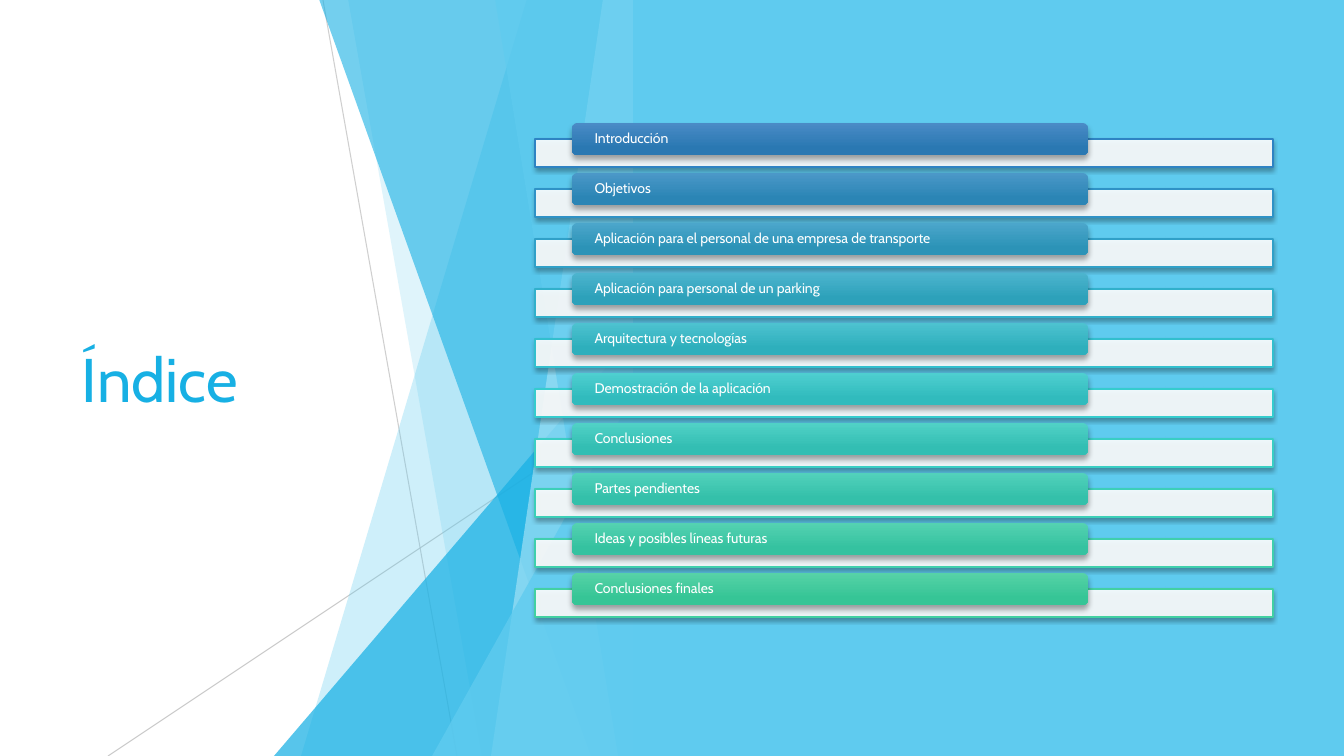
from lxml.etree import SubElement
from pptx import Presentation
from pptx.dml.color import RGBColor
from pptx.enum.shapes import MSO_CONNECTOR, MSO_SHAPE
from pptx.enum.text import MSO_ANCHOR
from pptx.oxml.ns import qn
from pptx.util import Pt

PX = 9071
WIDTH, HEIGHT = 1344, 756
PANEL_LEFT = 633
ROW_PITCH = 50

FONT = "Cabin"
WHITE = RGBColor(0xFF, 0xFF, 0xFF)
GRAY = RGBColor(0xBF, 0xBF, 0xBF)
SKY = RGBColor(0x5F, 0xCB, 0xEF)
PALE_SKY = RGBColor(0x9F, 0xE0, 0xF5)
BLUE = RGBColor(0x17, 0xB0, 0xE4)

TOPICS = [
    ("Introducción", RGBColor(0x2E, 0x83, 0xC3), RGBColor(0x4A, 0x8B, 0xC6), RGBColor(0x2A, 0x78, 0xB2)),
    ("Objetivos", RGBColor(0x2F, 0x92, 0xC6), RGBColor(0x4B, 0x98, 0xC8), RGBColor(0x2B, 0x85, 0xB5)),
    ("Aplicación para el personal de una empresa de transporte",
     RGBColor(0x30, 0xA0, 0xC8), RGBColor(0x4B, 0xA6, 0xCB), RGBColor(0x2C, 0x93, 0xB7)),
    ("Aplicación para personal de un parking",
     RGBColor(0x31, 0xB0, 0xCB), RGBColor(0x4C, 0xB4, 0xCE), RGBColor(0x2D, 0xA1, 0xBA)),
    ("Arquitectura y tecnologías",
     RGBColor(0x32, 0xBF, 0xCE), RGBColor(0x4D, 0xC2, 0xD0), RGBColor(0x2E, 0xAF, 0xBC)),
    ("Demostración de la aplicación",
     RGBColor(0x35, 0xCC, 0xCE), RGBColor(0x4E, 0xCF, 0xD0), RGBColor(0x31, 0xBB, 0xBD)),
    ("Conclusiones", RGBColor(0x39, 0xCE, 0xC4), RGBColor(0x50, 0xD1, 0xC6), RGBColor(0x33, 0xBE, 0xB3)),
    ("Partes pendientes", RGBColor(0x3C, 0xCF, 0xB8), RGBColor(0x52, 0xD1, 0xBB), RGBColor(0x34, 0xC0, 0xAA)),
    ("Ideas y posibles líneas futuras",
     RGBColor(0x3F, 0xCF, 0xAD), RGBColor(0x54, 0xD2, 0xB1), RGBColor(0x35, 0xC2, 0xA0)),
    ("Conclusiones finales", RGBColor(0x42, 0xD0, 0xA2), RGBColor(0x56, 0xD2, 0xA7), RGBColor(0x36, 0xC5, 0x96)),
]


def paint(shape, color, opacity=100):
    shape.shadow.inherit = False
    shape.line.fill.background()
    shape.fill.solid()
    shape.fill.fore_color.rgb = color
    if opacity < 100:
        color_element = shape.fill._xPr.find(qn("a:solidFill"))[0]
        SubElement(color_element, qn("a:alpha"), val=str(opacity * 1000))


def cast_shadow(shape, blur, distance):
    shape.shadow.inherit = False
    effects = shape._element.spPr.find(qn("a:effectLst"))
    shadow = SubElement(effects, qn("a:outerShdw"), blurRad=str(Pt(blur)), dist=str(Pt(distance)),
                        dir="5400000", algn="ctr", rotWithShape="0")
    color_element = SubElement(shadow, qn("a:srgbClr"), val="000000")
    SubElement(color_element, qn("a:alpha"), val="35000")


def write_text(shape, text, size, color, inset, line_spacing=1.0):
    frame = shape.text_frame
    frame.word_wrap = True
    frame.vertical_anchor = MSO_ANCHOR.MIDDLE
    frame.margin_left = frame.margin_right = inset * PX
    frame.margin_top = frame.margin_bottom = 0
    paragraph = frame.paragraphs[0]
    paragraph.alignment = 1
    paragraph.line_spacing = line_spacing
    run = paragraph.add_run()
    run.text = text
    run.font.name = FONT
    run.font.size = Pt(size)
    run.font.color.rgb = color


presentation = Presentation()
presentation.slide_width = WIDTH * PX
presentation.slide_height = HEIGHT * PX
slide = presentation.slides.add_slide(presentation.slide_layouts[6])
shapes = slide.shapes

for start_x, start_y, end_x, end_y, opacity in [(323, 0, 457, 756, 75), (633, 406, 108, 756, 80)]:
    connector = shapes.add_connector(MSO_CONNECTOR.STRAIGHT, start_x * PX, start_y * PX, end_x * PX, end_y * PX)
    connector.line.color.rgb = GRAY
    connector.line.width = Pt(0.75)
    line_color = connector.line.fill._xPr.find(qn("a:solidFill"))[0]
    SubElement(line_color, qn("a:alpha"), val=str(opacity * 1000))
    SubElement(connector._element.spPr, qn("a:effectLst"))

FACETS = [
    ("band", 527, 301, SKY, 30),
    ("band", 348, 482, SKY, 20),
    ("triangle", 274, 336, BLUE, 72),
    ("band", 319, 591, BLUE, 60),
    ("band", 603, 491, PALE_SKY, 70),
    ("band", 495, 618, SKY, 65),
    ("triangle", 432, 396, SKY, 80),
]
for kind, first, second, color, opacity in FACETS:
    if kind == "band":
        builder = shapes.build_freeform(first, -1, scale=PX)
        builder.add_line_segments([(PANEL_LEFT, -1), (PANEL_LEFT, HEIGHT), (second, HEIGHT)], close=True)
        facet = builder.convert_to_shape()
    else:
        facet = shapes.add_shape(MSO_SHAPE.ISOSCELES_TRIANGLE, first * PX, second * PX,
                                 (PANEL_LEFT - first) * PX, (HEIGHT - second) * PX)
        facet.adjustments[0] = 1
    paint(facet, color, opacity)

panel = shapes.add_shape(MSO_SHAPE.RECTANGLE, PANEL_LEFT * PX, 0, (WIDTH - PANEL_LEFT) * PX, HEIGHT * PX)
paint(panel, SKY)

title = shapes.add_textbox(72 * PX, 152 * PX, 391 * PX, 452 * PX)
write_text(title, "Índice", size=44, color=BLUE, inset=10)

for row, (topic, outline, gradient_top, gradient_bottom) in enumerate(TOPICS):
    offset = row * ROW_PITCH
    bar = shapes.add_shape(MSO_SHAPE.RECTANGLE, 535 * PX, (139 + offset) * PX, 738 * PX, 28 * PX)
    paint(bar, WHITE, 90)
    bar.line.color.rgb = outline
    bar.line.width = Pt(1)
    cast_shadow(bar, blur=3, distance=2)

    label = shapes.add_shape(MSO_SHAPE.ROUNDED_RECTANGLE, 572 * PX, (123 + offset) * PX, 516 * PX, 32 * PX)
    label.line.fill.background()
    label.fill.gradient()
    label.fill.gradient_angle = 270
    top_stop, bottom_stop = label.fill.gradient_stops
    top_stop.color.rgb, top_stop.position = gradient_top, 0
    bottom_stop.color.rgb, bottom_stop.position = gradient_bottom, 0.78
    cast_shadow(label, blur=4, distance=3)
    write_text(label, topic, size=10, color=WHITE, inset=21, line_spacing=0.9)

presentation.save("out.pptx")
